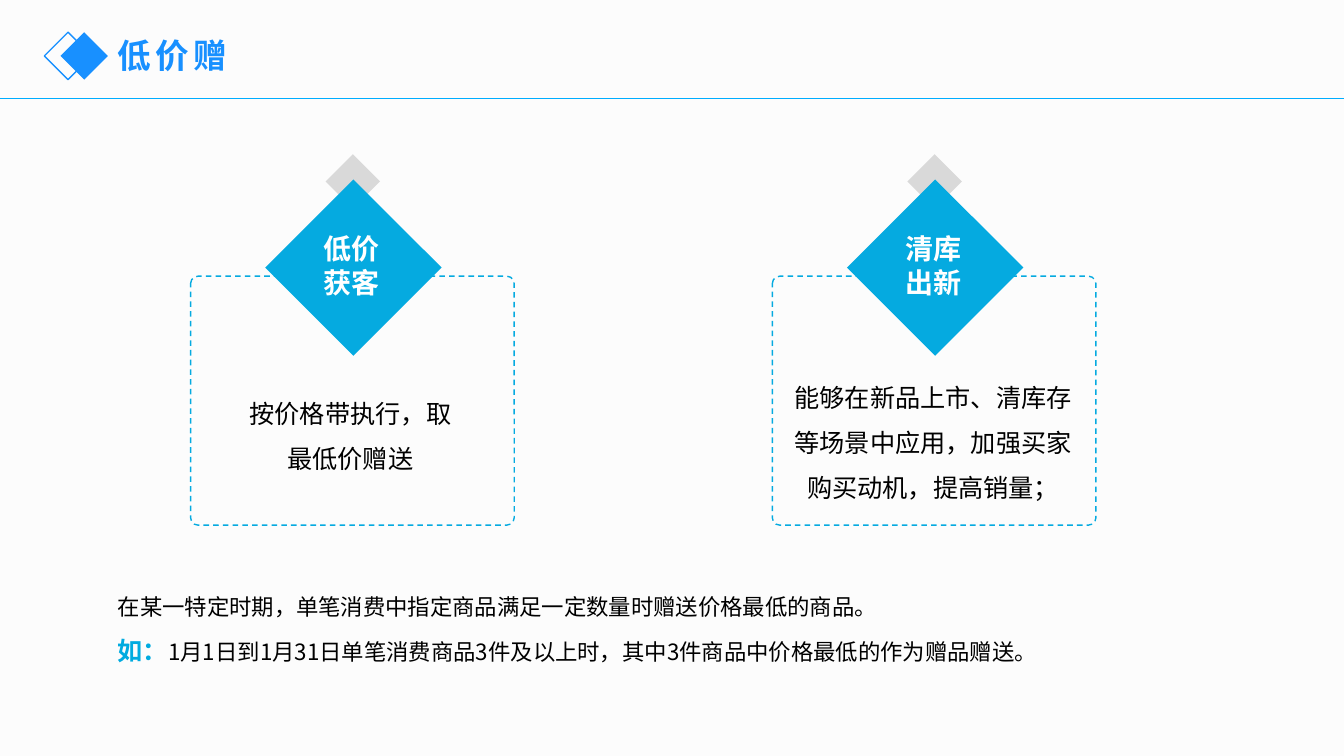
from pptx import Presentation
from pptx.dml.color import RGBColor
from pptx.enum.dml import MSO_LINE
from pptx.enum.shapes import MSO_CONNECTOR, MSO_SHAPE
from pptx.enum.text import PP_ALIGN
from pptx.oxml.ns import qn
from pptx.util import Pt
from lxml import etree

DASH = MSO_LINE.DASH
LINE = MSO_CONNECTOR.STRAIGHT
DIAMOND = MSO_SHAPE.DIAMOND
ROUND = MSO_SHAPE.ROUNDED_RECTANGLE
LEFT, CENTER = PP_ALIGN.LEFT, PP_ALIGN.CENTER
PX = 9144
FACE = "Noto Sans CJK SC"
COLORS = {
    "back": "FCFCFC", "rule": "00ADFF", "title": "1890FF", "text": "000000",
    "label": "00ABE0", "card": "05AAE0", "gray": "D9D9D9", "white": "FFFFFF",
}


def color(name):
    return RGBColor.from_string(COLORS[name])


class Deck:
    """Holds the style and the current slide, and draws each kind of element."""

    def __init__(self, width, height):
        self.deck = Presentation()
        self.deck.slide_width, self.deck.slide_height = width * PX, height * PX
        self.slide = self.deck.slides.add_slide(self.deck.slide_layouts[6])
        fill = self.slide.background.fill
        fill.solid()
        fill.fore_color.rgb = color("back")

    def rule(self, x1, y1, x2, y2, tint):
        line = self.slide.shapes.add_connector(LINE, *(v * PX for v in (x1, y1, x2, y2)))
        line.line.color.rgb = color(tint)
        line.line.width = Pt(1)
        etree.SubElement(line._element.spPr, qn("a:effectLst"))

    def shape(self, kind, box, fill=None, line=None, dash=None, round=None):
        shape = self.slide.shapes.add_shape(kind, *(v * PX for v in box))
        shape.shadow.inherit = False
        if round is not None:
            shape.adjustments[0] = round
        if fill:
            shape.fill.solid()
            shape.fill.fore_color.rgb = color(fill)
        else:
            shape.fill.background()
        if line:
            shape.line.color.rgb = color(line)
            shape.line.width = Pt(1)
            if dash:
                shape.line.dash_style = dash
        else:
            shape.line.fill.background()

    def style(self, font, size, tint, bold=False, track=0):
        font.size, font.bold, font.name = Pt(size), bold, FACE
        font.color.rgb = color(tint)
        props = font._rPr
        etree.SubElement(props, qn("a:ea")).set("typeface", FACE)
        if track:
            props.set("spc", str(track * 100))

    def text(self, box, paras, align=LEFT, space=1.0):
        frame = self.slide.shapes.add_textbox(*(v * PX for v in box)).text_frame
        frame.word_wrap = True
        for i, runs in enumerate(paras):
            para = frame.add_paragraph() if i else frame.paragraphs[0]
            para.alignment, para.line_spacing = align, space
            for words, *look in runs:
                run = para.add_run()
                run.text = words
                if len(runs) > 1:
                    self.style(run.font, *look)
            if len(runs) == 1:
                self.style(para.font, *runs[0][1:])

    def card(self, x, label, words, box):
        mid = x + 161
        self.shape(DIAMOND, (mid - 27, 153, 54, 54), "gray")
        self.shape(DIAMOND, (mid - 87, 178, 175, 175), "card")
        self.shape(ROUND, (x, 274, 321, 247), line="card", dash=DASH, round=0.03)
        self.text((mid - 41, 225, 80, 77), [[(label, 20, "white", True)]], CENTER)
        self.text(box, [[(words, 18, "text")]], CENTER, 1.5)


def main():
    page = Deck(1333, 750)
    page.rule(0, 98, 1333, 98, "rule")
    page.shape(DIAMOND, (44, 32, 47, 47), line="title")
    page.shape(DIAMOND, (60, 32, 47, 47), "title")
    page.text((107, 30, 549, 50), [[("低价赠", 24, "title", True, 3)]])
    page.card(189, "低价获客", "按价格带执行，取最低价赠送", (227, 375, 241, 94))
    page.card(766, "清库出新", "能够在新品上市、清库存等场景中应用，加强买家购买动机，提高销量；",
              (770, 359, 311, 139))
    page.text((107, 570, 1043, 129), [
        [("在某一特定时期，单笔消费中指定商品满足一定数量时赠送价格最低的商品。", 16, "text")],
        [("如：", 18, "label", True),
         ("1月1日到1月31日单笔消费商品3件及以上时，其中3件商品中价格最低的作为赠品赠送。", 16, "text")],
    ], space=1.5)
    page.deck.save("out.pptx")


if __name__ == "__main__":
    main()
